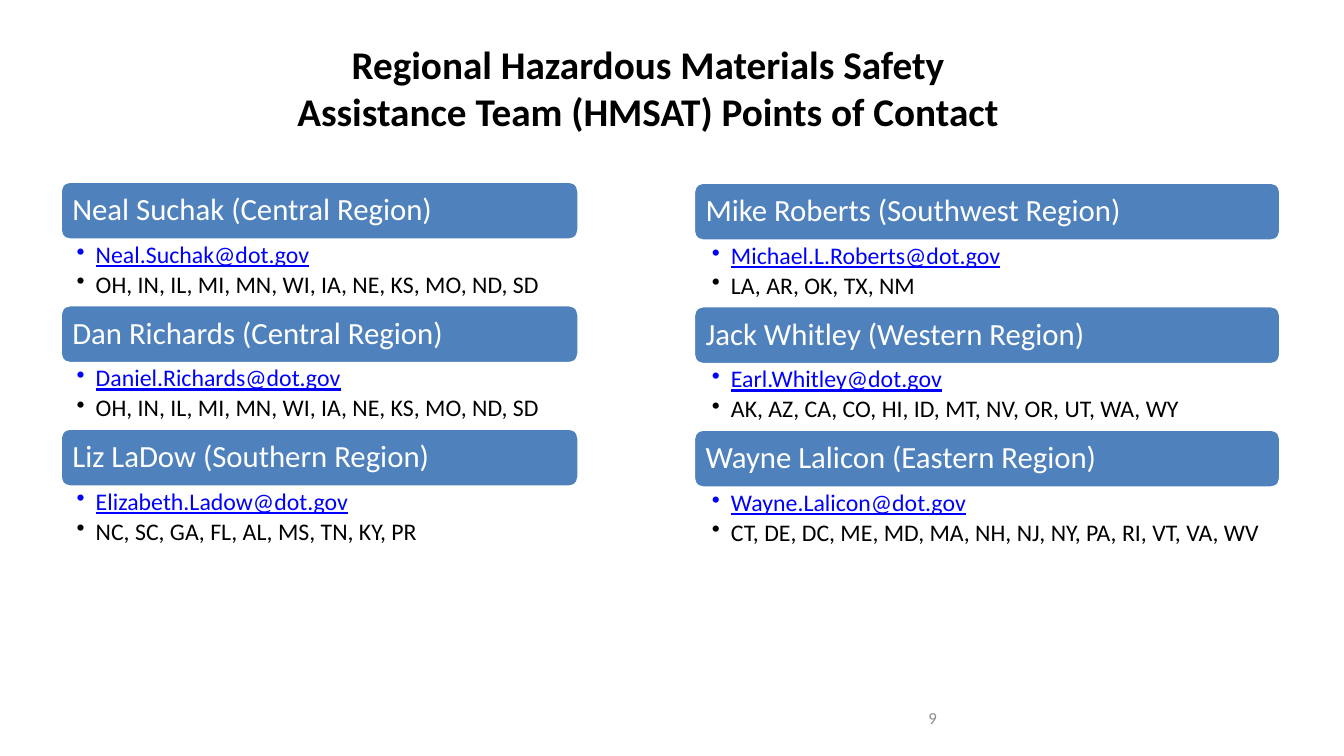
import pptx
import pptx.util
import pptx.dml.color
import pptx.enum.shapes
import pptx.enum.text
import pptx.oxml
import pptx.oxml.ns

Inches, Pt = pptx.util.Inches, pptx.util.Pt
ALIGN = pptx.enum.text.PP_ALIGN
ANCHOR = pptx.enum.text.MSO_ANCHOR

COLORS = {"band": "4F81BD", "white": "FFFFFF", "black": "000000",
          "link": "0000FF", "gray": "8C8C8C"}
FONT = "Calibri"
ROW_STEP = 1.225
BAND_HEIGHT = 0.58

# Each column: left, top, width, bullet inset, contacts
COLUMNS = [
    (0.6, 1.8, 5.14, 0.16, [
        ("Neal Suchak (Central Region)", "Neal.Suchak@dot.gov",
         "OH, IN, IL, MI, MN, WI, IA, NE, KS, MO, ND, SD"),
        ("Dan Richards (Central Region)", "Daniel.Richards@dot.gov",
         "OH, IN, IL, MI, MN, WI, IA, NE, KS, MO, ND, SD"),
        ("Liz LaDow (Southern Region)", "Elizabeth.Ladow@dot.gov",
         "NC, SC, GA, FL, AL, MS, TN, KY, PR"),
    ]),
    (6.88, 1.81, 5.82, 0.18, [
        ("Mike Roberts (Southwest Region)", "Michael.L.Roberts@dot.gov",
         "LA, AR, OK, TX, NM"),
        ("Jack Whitley (Western Region)", "Earl.Whitley@dot.gov",
         "AK, AZ, CA, CO, HI, ID, MT, NV, OR, UT, WA, WY"),
        ("Wayne Lalicon (Eastern Region)", "Wayne.Lalicon@dot.gov",
         "CT, DE, DC, ME, MD, MA, NH, NJ, NY, PA, RI, VT, VA, WV"),
    ]),
]


def rgb(name):
    return pptx.dml.color.RGBColor.from_string(COLORS[name])


def write(p, text, size=17, color="black", bold=False, underline=False,
          align=ALIGN.LEFT, line_spacing=None, space_after=None, bullet=False):
    """Fill a paragraph with one formatted run."""
    p.alignment = align
    if line_spacing:
        p.line_spacing = line_spacing
    if space_after:
        p.space_after = Pt(space_after)
    if bullet:
        pPr = p._p.get_or_add_pPr()
        pPr.set("marL", str(Inches(0.19)))
        pPr.set("indent", str(Inches(-0.19)))
        pPr.append(pptx.oxml.parse_xml(
            f'<a:buChar {pptx.oxml.ns.nsdecls("a")} char="•"/>'))
    r = p.add_run()
    r.text = text
    r.font.name, r.font.size = FONT, Pt(size)
    r.font.bold, r.font.underline = bold, underline
    r.font.color.rgb = rgb(color)


class Deck:
    def __init__(self):
        self.prs = pptx.Presentation()
        self.prs.slide_width, self.prs.slide_height = Inches(13.33), Inches(7.5)
        self.s = self.prs.slides.add_slide(self.prs.slide_layouts[6])

    def frame(self, sp, anchor, insets):
        tf = sp.text_frame
        tf.word_wrap = True
        tf.vertical_anchor = anchor
        (tf.margin_left, tf.margin_top,
         tf.margin_right, tf.margin_bottom) = map(Inches, insets)
        return tf

    def text(self, box, anchor=ANCHOR.MIDDLE, insets=(0.1, 0.05, 0.1, 0.05)):
        return self.frame(self.s.shapes.add_textbox(*map(Inches, box)), anchor, insets)

    def band(self, box, name):
        sp = self.s.shapes.add_shape(
            pptx.enum.shapes.MSO_SHAPE.ROUNDED_RECTANGLE, *map(Inches, box))
        sp.shadow.inherit = False
        sp.fill.solid()
        sp.fill.fore_color.rgb = rgb("band")
        sp.line.color.rgb = rgb("white")
        sp.line.width = Pt(2)
        tf = self.frame(sp, ANCHOR.MIDDLE, (0.09,) * 4)
        write(tf.paragraphs[0], name, size=22, color="white", line_spacing=0.9)

    def details(self, box, inset, email, states):
        tf = self.text(box, ANCHOR.TOP, (inset, 0.03, 0.17, 0.03))
        style = dict(line_spacing=0.9, space_after=3, bullet=True)
        write(tf.paragraphs[0], email, color="link", underline=True, **style)
        write(tf.add_paragraph(), states, **style)


def main():
    deck = Deck()

    # Title and slide number
    write(deck.text((2.72, 0.35, 7.41, 1.04)).paragraphs[0],
          "Regional Hazardous Materials Safety Assistance Team (HMSAT) Points of Contact",
          size=28, bold=True, align=ALIGN.CENTER)
    write(deck.text((9, 6.92, 0.39, 0.4)).paragraphs[0], "9",
          size=12, color="gray", align=ALIGN.RIGHT)

    # Contact columns
    for left, top, width, inset, contacts in COLUMNS:
        for row, (name, email, states) in enumerate(contacts):
            y = top + row * ROW_STEP
            deck.band((left, y, width, BAND_HEIGHT), name)
            deck.details((left, y + BAND_HEIGHT, width, 0.65), inset, email, states)

    deck.prs.save("out.pptx")


if __name__ == "__main__":
    main()
